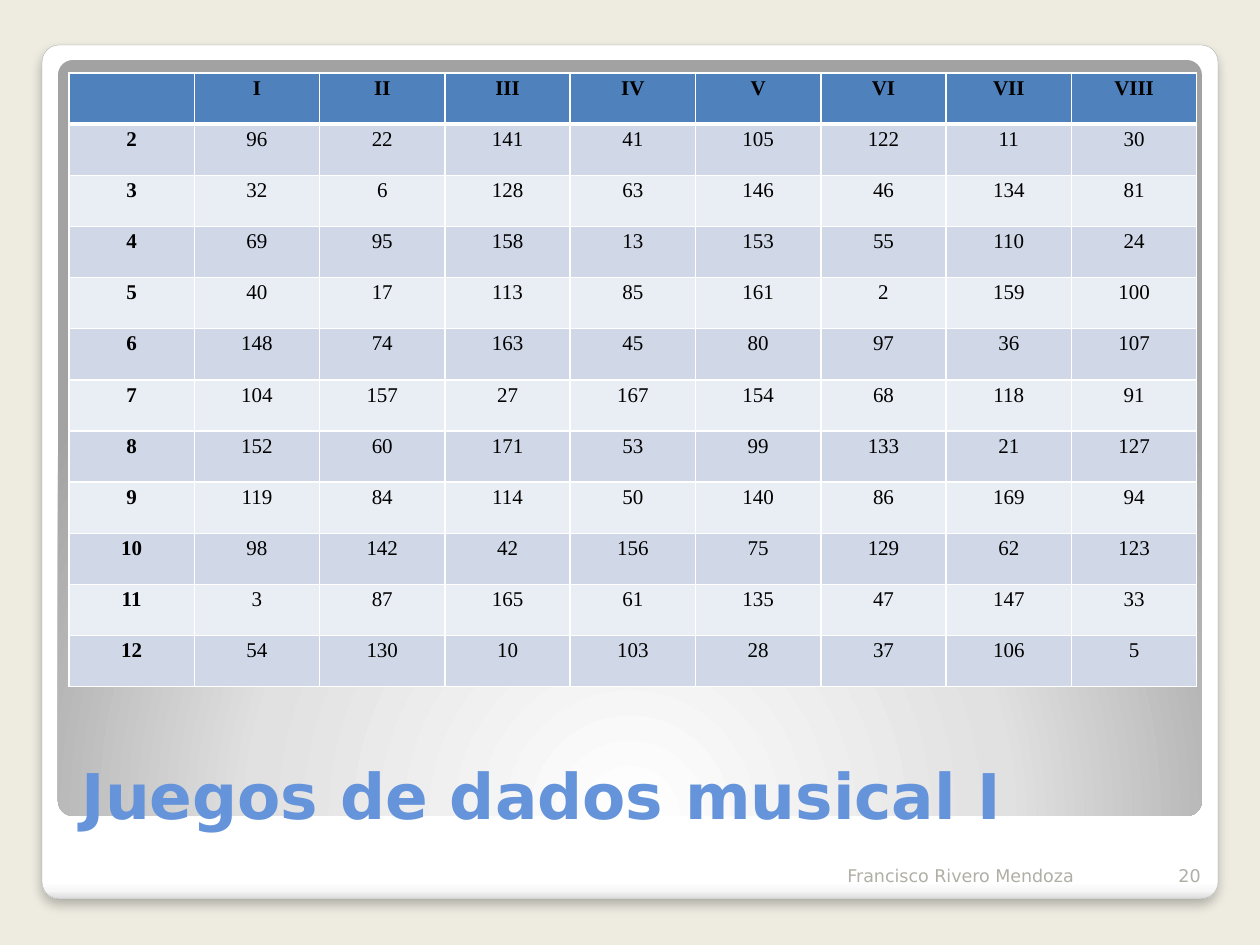
import pptx
import pptx.dml.color
import pptx.enum.shapes
import pptx.enum.text
import pptx.oxml
import pptx.oxml.ns
import pptx.util

PX = 914400 / 126
NS = 'xmlns:a="http://schemas.openxmlformats.org/drawingml/2006/main"'
HUES = {
    "back": "EEECE1", "white": "FFFFFF", "pale": "F7F7F7", "edge": "DADADA",
    "mid": "E1E1E1", "dark": "A2A2A2", "line": "A4A4A4", "black": "000000",
    "title": "6594DA", "foot": "B0AFA6", "head": "4F81BD", "odd": "D0D8E8", "even": "E9EDF4",
}
SANS, SERIF = "DejaVu Sans", "Times New Roman"
ALIGN = pptx.enum.text.PP_ALIGN
BOTTOM = pptx.enum.text.MSO_ANCHOR.BOTTOM
HEADS = ["", "I", "II", "III", "IV", "V", "VI", "VII", "VIII"]
THROWS = [
    [2, 96, 22, 141, 41, 105, 122, 11, 30],
    [3, 32, 6, 128, 63, 146, 46, 134, 81],
    [4, 69, 95, 158, 13, 153, 55, 110, 24],
    [5, 40, 17, 113, 85, 161, 2, 159, 100],
    [6, 148, 74, 163, 45, 80, 97, 36, 107],
    [7, 104, 157, 27, 167, 154, 68, 118, 91],
    [8, 152, 60, 171, 53, 99, 133, 21, 127],
    [9, 119, 84, 114, 50, 140, 86, 169, 94],
    [10, 98, 142, 42, 156, 75, 129, 62, 123],
    [11, 3, 87, 165, 61, 135, 47, 147, 33],
    [12, 54, 130, 10, 103, 28, 37, 106, 5],
]


def emu(*sizes):
    """Turn px lengths into EMU."""
    return [pptx.util.Emu(round(size * PX)) for size in sizes]


def rgb(name):
    """Look up a colour by name."""
    return pptx.dml.color.RGBColor.from_string(HUES[name])


def write(frame, text, size=10, font=SANS, hue="black", bold=False, align=ALIGN.LEFT, space=1.0):
    """Put one formatted paragraph into a text frame."""
    para = frame.paragraphs[0]
    para.alignment = align
    para.line_spacing = space
    run = para.add_run()
    run.text = str(text)
    run.font.size = pptx.util.Pt(size)
    run.font.name = font
    run.font.bold = bold
    run.font.color.rgb = rgb(hue)


def plate(slide, box, stops, shade):
    """Add a rounded plate with a gradient fill."""
    shape = slide.shapes.add_shape(pptx.enum.shapes.MSO_SHAPE.ROUNDED_RECTANGLE, *emu(*box))
    shape.adjustments[0] = 0.02
    shape.shadow.inherit = False
    shape.line.fill.background()
    marks = "".join(
        f'<a:gs pos="{spot * 1000}"><a:srgbClr val="{HUES[hue]}"/></a:gs>' for spot, hue in stops)
    fill = pptx.oxml.parse_xml(f'<a:gradFill {NS}><a:gsLst>{marks}</a:gsLst>{shade}</a:gradFill>')
    shape._element.spPr.find(pptx.oxml.ns.qn("a:prstGeom")).addnext(fill)
    return shape


def card(slide, box):
    """Add the white card with its soft shadow."""
    stops = [(0, "white"), (98, "white"), (99, "pale"), (100, "edge")]
    shape = plate(slide, box, stops, '<a:lin ang="5400000" scaled="0"/>')
    shape.line.color.rgb = rgb("line")
    shape.line.width = pptx.util.Pt(0.16)
    glow = shape._element.spPr.find(pptx.oxml.ns.qn("a:effectLst"))
    glow.append(pptx.oxml.parse_xml(
        f'<a:outerShdw {NS} blurRad="76200" dist="50800" dir="5400000" rotWithShape="0">'
        f'<a:srgbClr val="{HUES["black"]}"><a:alpha val="25000"/></a:srgbClr></a:outerShdw>'))


def panel(slide, box):
    """Add the grey panel lit from below."""
    shade = '<a:path path="circle"><a:fillToRect l="50000" t="175000" r="50000" b="-75000"/></a:path>'
    plate(slide, box, [(0, "white"), (55, "mid"), (100, "dark")], shade)


def title(slide, box, text):
    """Place the title in front of the panel."""
    shape = slide.shapes.title
    slide.shapes._spTree.append(shape._element)
    shape.left, shape.top, shape.width, shape.height = emu(*box)
    frame = shape.text_frame
    frame.word_wrap = True
    frame.vertical_anchor = BOTTOM
    frame.margin_bottom = 0
    write(frame, text, size=36, hue="title", bold=True)


def rule(cell, side, width):
    """Draw one white border of a cell."""
    cell._tc.get_or_add_tcPr().append(pptx.oxml.parse_xml(
        f'<a:{side} {NS} w="{width * 12700}"><a:solidFill>'
        f'<a:srgbClr val="{HUES["white"]}"/></a:solidFill></a:{side}>'))


def grid(slide, box, rows):
    """Add the table of dice throws."""
    left, top, width, height = box
    table = slide.shapes.add_table(len(rows), len(rows[0]), *emu(*box)).table
    for col in table.columns:
        col.width = emu(width / len(rows[0]))[0]
    for r, row in enumerate(rows):
        table.rows[r].height = emu(height / len(rows))[0]
        for c, text in enumerate(row):
            cell = table.cell(r, c)
            cell.margin_left, cell.margin_right, cell.margin_top, cell.margin_bottom = emu(9, 9, 0, 0)
            for side in ("lnL", "lnR", "lnT", "lnB"):
                thick = (r, side) in ((0, "lnB"), (1, "lnT"))
                rule(cell, side, 3 if thick else 1)
            cell.fill.solid()
            cell.fill.fore_color.rgb = rgb("head" if r == 0 else "odd" if r % 2 else "even")
            write(cell.text_frame, text, size=12, font=SERIF, bold=r == 0 or c == 0,
                  align=ALIGN.CENTER, space=1.15)


def foot(slide, box, name, page):
    """Add the author and the page number."""
    left, top, width, height = box
    tail = 63
    parts = [(left, width - tail, name, ALIGN.LEFT), (left + width - tail, tail, page, ALIGN.RIGHT)]
    for x, span, text, align in parts:
        frame = slide.shapes.add_textbox(*emu(x, top, span, height)).text_frame
        frame.word_wrap = True
        frame.vertical_anchor = BOTTOM
        write(frame, text, hue="foot", align=align)


def main():
    """Build the slide and save it."""
    deck = pptx.Presentation()
    deck.slide_width, deck.slide_height = emu(1260, 945)
    slide = deck.slides.add_slide(deck.slide_layouts[5])
    slide.background.fill.solid()
    slide.background.fill.fore_color.rgb = rgb("back")
    card(slide, (42, 45, 1176, 854))
    panel(slide, (58, 60, 1144, 756))
    title(slide, (69, 687, 1128, 145), "Juegos de dados musical I")
    grid(slide, (69, 73, 1128, 614), [HEADS] + THROWS)
    foot(slide, (835, 842, 378, 50), "Francisco Rivero Mendoza", 20)
    deck.save("out.pptx")


if __name__ == "__main__":
    main()
